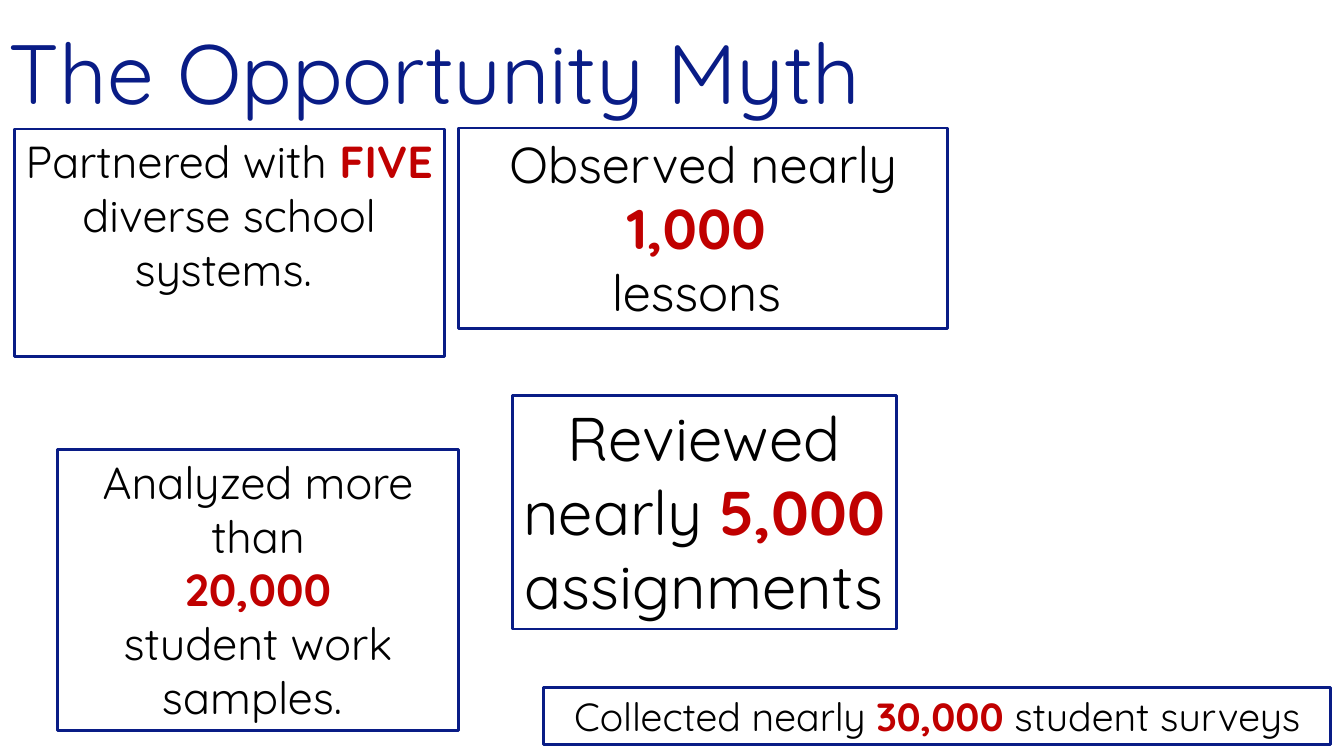
from dataclasses import dataclass

from pptx import Presentation
from pptx import util as u
from pptx.dml.color import RGBColor
from pptx.enum import shapes, text


@dataclass(frozen=True)
class Theme:
    font: str = "Quicksand"
    navy: str = "091C86"
    ink: str = "000000"
    red: str = "C00000"
    title: int = 60
    line: int = 2


THEME = Theme()
WIDE, HIGH = 13.33, 7.5

# Box in inches, type size, size of the figure, paragraphs; * marks the figure.
FACTS = [
    ((0.14, 1.28, 4.27, 2.26), 32, 32,
     ["Partnered with *FIVE*", "diverse school systems. "]),
    ((4.55, 1.27, 4.85, 1.99), 36, 40,
     ["Observed nearly *1,000* ", "lessons "]),
    ((0.57, 4.46, 3.98, 2.79), 32, 32,
     ["Analyzed more than", "*20,000*", "student work samples. "]),
    ((5.39, 6.82, 7.81, 0.57), 28, 28,
     ["Collected nearly *30,000* student surveys"]),
    ((5.08, 3.92, 3.81, 2.32), 44, 44,
     ["Reviewed nearly *5,000 *assignments "]),
]


def write(para, words, size, color=THEME.ink, bold=False):
    run = para.add_run()
    run.text = words
    run.font.name = THEME.font
    run.font.size = u.Pt(size)
    run.font.bold = bold
    run.font.color.rgb = RGBColor.from_string(color)


def add_title(slide, box, words):
    title = slide.shapes.title
    title.left, title.top, title.width, title.height = map(u.Inches, box)
    frame = title.text_frame
    frame.vertical_anchor = text.MSO_ANCHOR.BOTTOM
    para = frame.paragraphs[0]
    para.alignment = text.PP_ALIGN.CENTER
    para.line_spacing = 0.9
    write(para, words, THEME.title, color=THEME.navy)


def add_fact(slide, box, size, big, lines):
    """Draw an outlined box whose starred figure is bold and red."""
    card = slide.shapes.add_shape(
        shapes.MSO_SHAPE.RECTANGLE, *map(u.Inches, box))
    card.shadow.inherit = False
    card.fill.background()
    card.line.color.rgb = RGBColor.from_string(THEME.navy)
    card.line.width = u.Pt(THEME.line)
    frame = card.text_frame
    frame.word_wrap = True
    frame.auto_size = text.MSO_AUTO_SIZE.NONE
    frame.vertical_anchor = text.MSO_ANCHOR.TOP
    for row, line in enumerate(lines):
        para = frame.add_paragraph() if row else frame.paragraphs[0]
        para.alignment = text.PP_ALIGN.CENTER
        for part, words in enumerate(line.split("*")):
            if words and part % 2:
                write(para, words, big, color=THEME.red, bold=True)
            elif words:
                write(para, words, size)


def main():
    deck = Presentation()
    deck.slide_width, deck.slide_height = u.Inches(WIDE), u.Inches(HIGH)
    slide = deck.slides.add_slide(deck.slide_layouts[5])
    add_title(slide, (-1.09, 0.09, 11.03, 1.18), "The Opportunity Myth ")
    for fact in FACTS:
        add_fact(slide, *fact)
    deck.save("out.pptx")


if __name__ == "__main__":
    main()
